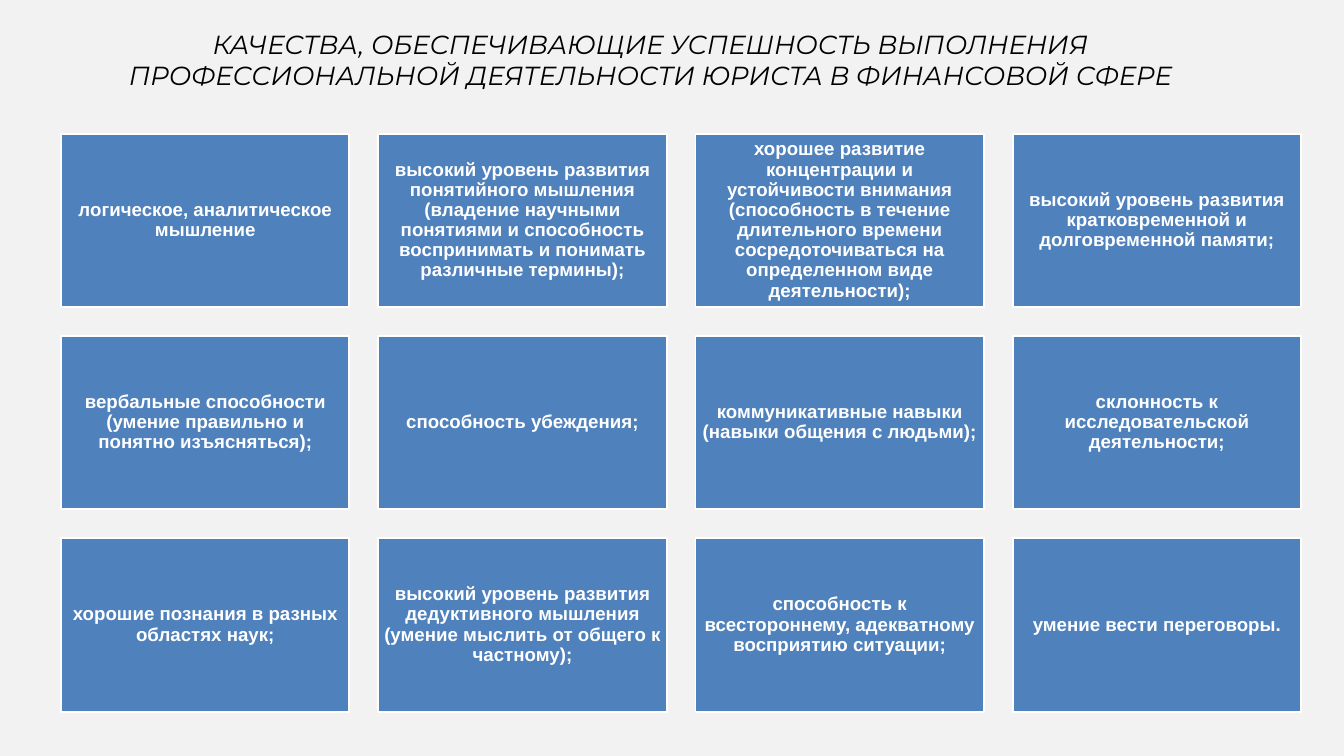
import pptx
import pptx.util
from pptx.dml.color import RGBColor
from pptx.enum.shapes import MSO_SHAPE
from pptx.enum.text import MSO_ANCHOR, MSO_AUTO_SIZE, PP_ALIGN
from pptx.util import Inches

COLORS = {"background": "F2F2F2", "card": "4F81BD", "white": "FFFFFF", "title": "000000"}
COLORS = {part: RGBColor.from_string(value) for part, value in COLORS.items()}

HEADING = (
    "КАЧЕСТВА, ОБЕСПЕЧИВАЮЩИЕ УСПЕШНОСТЬ ВЫПОЛНЕНИЯ "
    "ПРОФЕССИОНАЛЬНОЙ ДЕЯТЕЛЬНОСТИ ЮРИСТА В ФИНАНСОВОЙ СФЕРЕ"
)
QUALITIES = [
    "логическое, аналитическое мышление",
    "высокий уровень развития понятийного мышления (владение научными понятиями "
    "и способность воспринимать и понимать различные термины);",
    "хорошее развитие концентрации и устойчивости внимания (способность в течение "
    "длительного времени сосредоточиваться на определенном виде деятельности);",
    "высокий уровень развития кратковременной и долговременной памяти;",
    "вербальные способности (умение правильно и понятно изъясняться);",
    "способность убеждения;",
    "коммуникативные навыки (навыки общения с людьми);",
    "склонность к исследовательской деятельности;",
    "хорошие познания в разных областях наук;",
    "высокий уровень развития дедуктивного мышления (умение мыслить от общего к частному);",
    "способность к всестороннему, адекватному восприятию ситуации;",
    "умение вести переговоры.",
]
COLUMNS = 4
LEFT, TOP = 0.91, 1.99
WIDTH, HEIGHT = 4.29, 2.58
GAP = 0.43


def add_centered_run(frame, text, font_name, size, color):
    paragraph = frame.paragraphs[0]
    paragraph.alignment = PP_ALIGN.CENTER
    run = paragraph.add_run()
    run.text = text
    run.font.name = font_name
    run.font.size = pptx.util.Pt(size)
    run.font.color.rgb = color
    return paragraph, run


deck = pptx.Presentation()
deck.slide_width, deck.slide_height = Inches(20), Inches(11.25)
slide = deck.slides.add_slide(deck.slide_layouts[5])
slide.background.fill.solid()
slide.background.fill.fore_color.rgb = COLORS["background"]

heading = slide.shapes.title
heading.left, heading.top = Inches(1.14), Inches(0.37)
heading.width, heading.height = Inches(17.07), Inches(1.04)
heading.text_frame.word_wrap = True
heading.text_frame.auto_size = MSO_AUTO_SIZE.SHAPE_TO_FIT_TEXT
heading.text_frame.vertical_anchor = MSO_ANCHOR.TOP
_, heading_run = add_centered_run(
    heading.text_frame, HEADING, "Montserrat", 28, COLORS["title"]
)
heading_run.font.italic = True

for index, quality in enumerate(QUALITIES):
    row, column = divmod(index, COLUMNS)
    card = slide.shapes.add_shape(
        MSO_SHAPE.RECTANGLE,
        Inches(LEFT + column * (WIDTH + GAP)),
        Inches(TOP + row * (HEIGHT + GAP)),
        Inches(WIDTH),
        Inches(HEIGHT),
    )
    card.shadow.inherit = False
    card.fill.solid()
    card.fill.fore_color.rgb = COLORS["card"]
    card.line.color.rgb = COLORS["white"]
    card.line.width = pptx.util.Pt(2)

    frame = card.text_frame
    frame.word_wrap = True
    frame.vertical_anchor = MSO_ANCHOR.MIDDLE
    frame.margin_left = frame.margin_right = Inches(0.08)
    frame.margin_top = frame.margin_bottom = Inches(0.08)
    paragraph, run = add_centered_run(frame, quality, "Arial", 20, COLORS["white"])
    paragraph.line_spacing = 0.9
    run.font.bold = True

deck.save("out.pptx")
